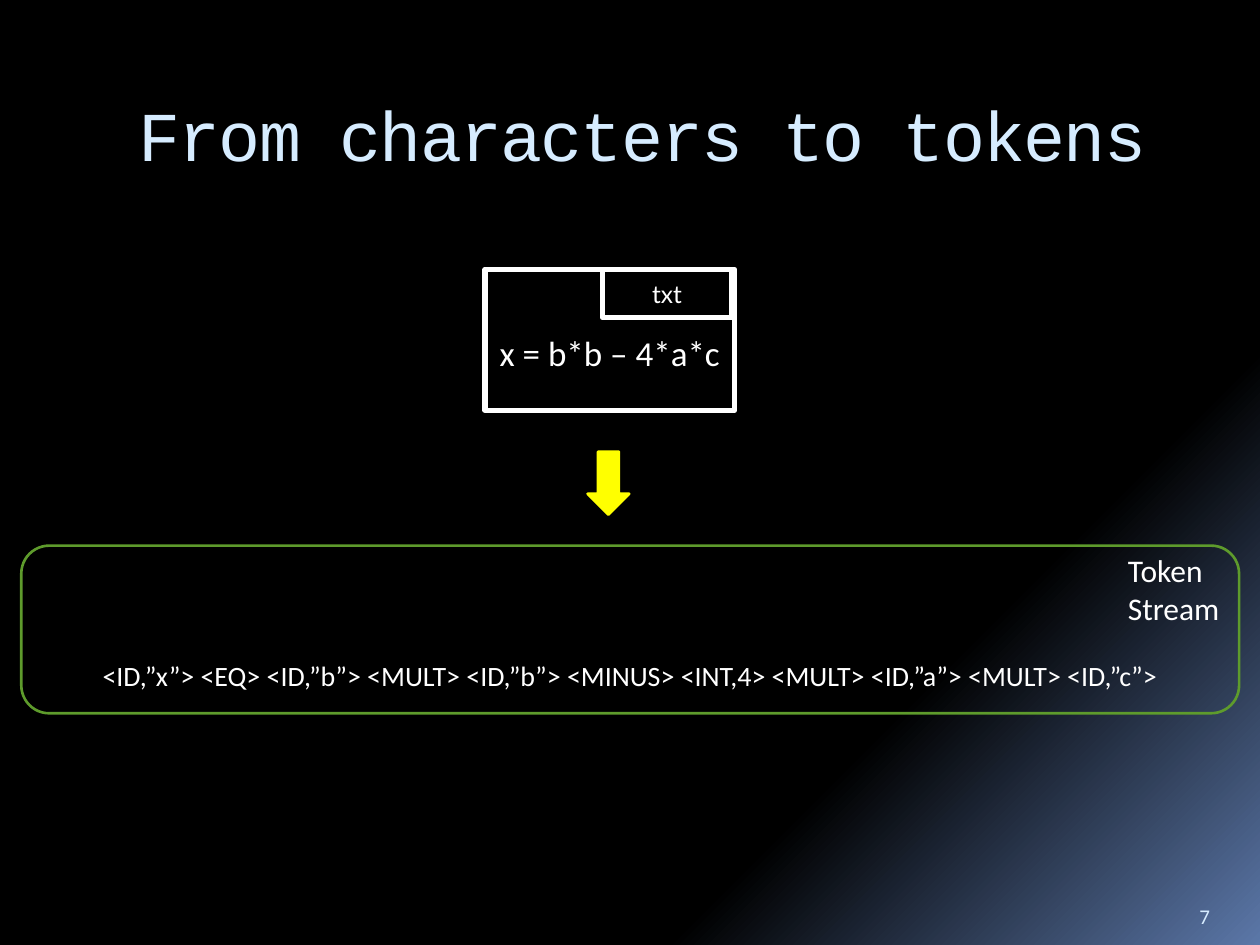
from lxml import etree
from pptx import Presentation
from pptx.dml.color import RGBColor
from pptx.enum.shapes import MSO_SHAPE
from pptx.enum.text import MSO_ANCHOR, PP_ALIGN
from pptx.oxml.ns import qn
from pptx.util import Cm, Pt

BLACK = RGBColor(0x00, 0x00, 0x00)
WHITE = RGBColor(0xFF, 0xFF, 0xFF)
PALE_BLUE = RGBColor(0xD6, 0xEC, 0xFF)
STEEL_BLUE = RGBColor(0x5B, 0x77, 0xA8)
YELLOW = RGBColor(0xFF, 0xFF, 0x00)
GREEN = RGBColor(0x5E, 0x9B, 0x2C)
LEFT, CENTER = PP_ALIGN.LEFT, PP_ALIGN.CENTER
TOP, MIDDLE, BOTTOM = MSO_ANCHOR.TOP, MSO_ANCHOR.MIDDLE, MSO_ANCHOR.BOTTOM
RECTANGLE = MSO_SHAPE.RECTANGLE
ROUNDED_RECTANGLE = MSO_SHAPE.ROUNDED_RECTANGLE
RIGHT_ARROW = MSO_SHAPE.RIGHT_ARROW

TOKENS = [
    "<ID,”x”>", "<EQ>", "<ID,”b”>", "<MULT>", "<ID,”b”>", "<MINUS>",
    "<INT,4>", "<MULT>", "<ID,”a”>", "<MULT>", "<ID,”c”>",
]


def write_text(shape, lines, size, color=WHITE, font="Calibri",
               align=LEFT, anchor=TOP, wrap=True):
    """Write lines into one paragraph of a shape and return the runs."""
    frame = shape.text_frame
    frame.word_wrap = wrap
    frame.vertical_anchor = anchor
    paragraph = frame.paragraphs[0]
    paragraph.alignment = align
    runs = []
    for index, line in enumerate(lines):
        if index:
            paragraph.add_line_break()
        run = paragraph.add_run()
        run.text = line
        run.font.size = Pt(size)
        run.font.name = font
        run.font.color.rgb = color
        runs.append(run)
    return runs


def add_text(shapes, box, lines, size, **style):
    """Add a text box, with its box in centimetres, and return its runs."""
    return write_text(shapes.add_textbox(*map(Cm, box)), lines, size, **style)


def add_outline(shapes, kind, box, color, width):
    """Add an unfilled preset shape, with its box in centimetres."""
    shape = shapes.add_shape(kind, *map(Cm, box))
    shape.shadow.inherit = False
    shape.fill.background()
    shape.line.color.rgb = color
    shape.line.width = Pt(width)
    return shape


def paint_background(slide):
    """Fill the background with a diagonal gradient that stays black until late."""
    fill = slide.background.fill
    fill.gradient()
    fill.gradient_angle = 315
    stops = fill._fill._gradFill.find(qn("a:gsLst"))
    for stop in list(stops):
        stops.remove(stop)
    for percent, color in ((65, BLACK), (73, BLACK), (100, STEEL_BLUE)):
        stop = etree.SubElement(stops, qn("a:gs"), pos=str(percent * 1000))
        etree.SubElement(stop, qn("a:srgbClr"), val=str(color))


def add_title(slide, box):
    """Add the slide title with slightly tightened letters."""
    runs = add_text(slide.shapes, box, ["From characters to tokens"], 40,
                    color=PALE_BLUE, font="Courier New", anchor=MIDDLE)
    for run in runs:
        run.font._element.set("spc", "-100")


def add_source_file(slide, box):
    """Add the text file with its expression and its type tab at top right."""
    left, top, width, height = box
    tab_width, tab_height = 2.62, 0.97
    group = slide.shapes.add_group_shape()
    page = add_outline(group.shapes, RECTANGLE, box, WHITE, 3)
    page.text_frame.margin_top = Cm(0.64)
    write_text(page, ["x = b*b – 4*a*c"], 20, align=CENTER, anchor=MIDDLE,
               wrap=False)
    tab_box = (left + width - tab_width - 0.05, top, tab_width, tab_height)
    tab = add_outline(group.shapes, RECTANGLE, tab_box, WHITE, 3)
    write_text(tab, ["txt"], 14, font="Lato", align=CENTER, anchor=MIDDLE)


def add_down_arrow(slide, box):
    """Add the yellow arrow, turned to point down."""
    arrow = add_outline(slide.shapes, RIGHT_ARROW, box, YELLOW, 1.5)
    arrow.fill.solid()
    arrow.fill.fore_color.rgb = YELLOW
    arrow.rotation = 90


def add_token_stream(slide, box):
    """Add the token list and its label inside a rounded frame."""
    left, top, width, height = box
    label_width = 2.46
    add_text(slide.shapes, (left, top + 2.16, width, 0.94),
             [" ".join(TOKENS)], 16, align=CENTER)
    add_text(slide.shapes,
             (left + width - label_width - 0.03, top - 0.02, label_width, 1.8),
             ["Token", "Stream"], 18, wrap=False)
    add_outline(slide.shapes, ROUNDED_RECTANGLE, box, GREEN, 1.5)


def add_slide_number(slide, box):
    """Add the slide number."""
    add_text(slide.shapes, box, ["7"], 12, color=PALE_BLUE, anchor=BOTTOM)


def main():
    """Build and save the presentation."""
    presentation = Presentation()
    presentation.slide_width = Cm(25.4)
    presentation.slide_height = Cm(19.05)
    slide = presentation.slides.add_slide(presentation.slide_layouts[6])
    paint_background(slide)
    add_title(slide, (2.54, 1.42, 21.59, 2.54))
    add_slide_number(slide, (23.93, 17.83, 1.27, 1.02))
    add_source_file(slide, (9.78, 5.43, 5.03, 2.84))
    add_down_arrow(slide, (11.63, 9.32, 1.27, 0.84))
    add_token_stream(slide, (0.43, 11, 24.55, 3.38))
    presentation.save("out.pptx")


if __name__ == "__main__":
    main()
